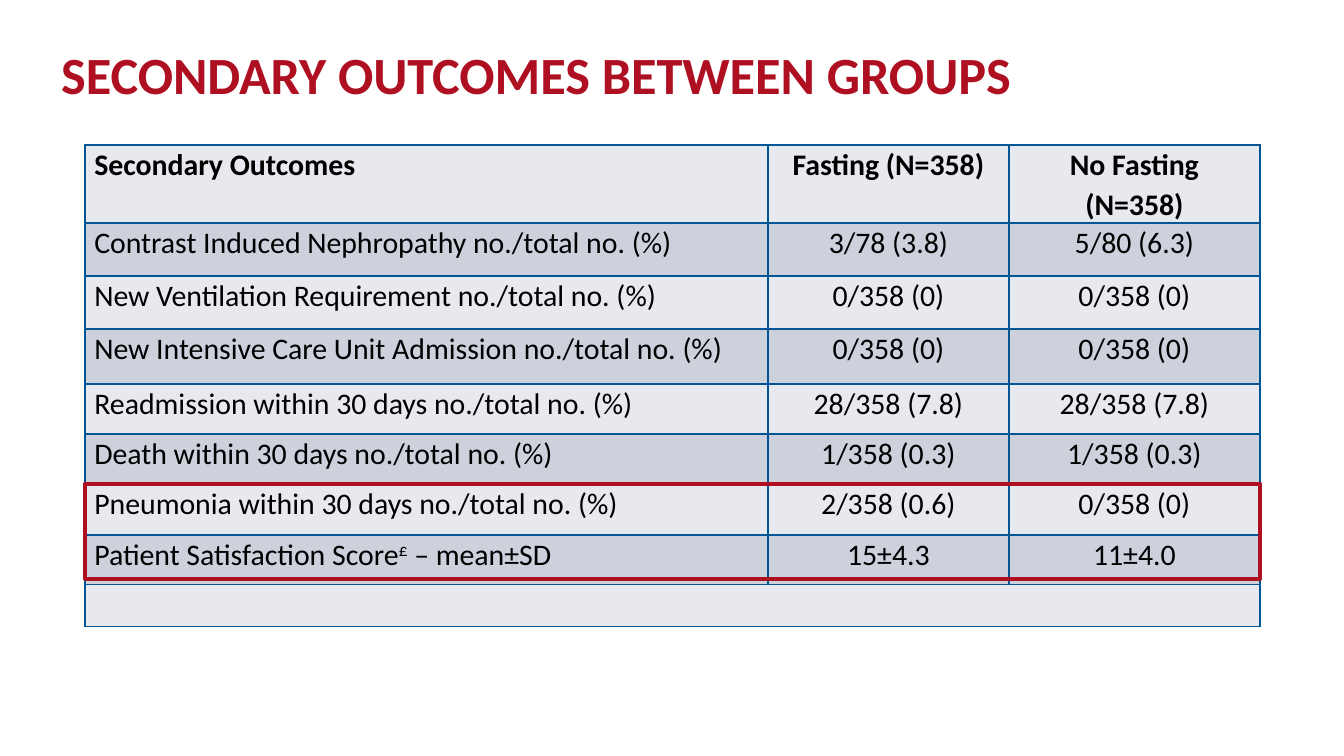
from lxml import etree
from pptx import Presentation
from pptx import util as u
from pptx.dml.color import RGBColor
from pptx.enum import shapes, text
from pptx.oxml.ns import qn

EMU_PER_PX = 914400 / 134.4
FONT = "Calibri"
RED = "AE1022"
BLACK = "000000"
BORDER = "005694"
BANDS = ["E7E9EE", "CCD1DC"]
COLUMN_WIDTHS = [683, 241, 251]
ROW_HEIGHTS = [78, 53, 53, 55, 50, 50, 51, 50, 42]
# A caret pair marks superscript text.
OUTCOMES = [
    ("Secondary Outcomes", "Fasting (N=358)", "No Fasting (N=358)"),
    ("Contrast Induced Nephropathy no./total no. (%)", "3/78 (3.8)", "5/80 (6.3)"),
    ("New Ventilation Requirement no./total no. (%)", "0/358 (0)", "0/358 (0)"),
    ("New Intensive Care Unit Admission no./total no. (%)", "0/358 (0)", "0/358 (0)"),
    ("Readmission within 30 days no./total no. (%)", "28/358 (7.8)", "28/358 (7.8)"),
    ("Death within 30 days no./total no. (%)", "1/358 (0.3)", "1/358 (0.3)"),
    ("Pneumonia within 30 days no./total no. (%)", "2/358 (0.6)", "0/358 (0)"),
    ("Patient Satisfaction Score^£^ – mean±SD", "15±4.3", "11±4.0"),
]


def px(length):
    return u.Emu(round(length * EMU_PER_PX))


def color(hex_code):
    return RGBColor.from_string(hex_code)


def add_run(paragraph, words, size, hex_code, bold=False, superscript=False):
    run = paragraph.add_run()
    run.text = words
    run.font.name = FONT
    run.font.size = u.Pt(size)
    run.font.bold = bold
    run.font.color.rgb = color(hex_code)
    if superscript:
        run._r.get_or_add_rPr().set("baseline", "30000")


def add_title(slide, words):
    title = slide.shapes.add_textbox(px(48), px(50), px(1122), px(63))
    frame = title.text_frame
    frame.word_wrap = True
    frame.vertical_anchor = text.MSO_ANCHOR.MIDDLE
    paragraph = frame.paragraphs[0]
    paragraph.line_spacing = u.Pt(25)
    add_run(paragraph, words, 28, RED, bold=True)


def style_cell(cell, fill):
    """Set margins, a thin border on all sides and the band fill."""
    cell.margin_left = cell.margin_right = u.Inches(0.07)
    cell.margin_top = cell.margin_bottom = 0
    properties = cell._tc.get_or_add_tcPr()
    for side in ("a:lnL", "a:lnR", "a:lnT", "a:lnB"):
        line = etree.SubElement(properties, qn(side), w=str(u.Pt(1)))
        solid = etree.SubElement(line, qn("a:solidFill"))
        etree.SubElement(solid, qn("a:srgbClr"), val=BORDER)
    cell.fill.solid()
    cell.fill.fore_color.rgb = color(fill)


def write_cell(cell, words, align, bold):
    paragraph = cell.text_frame.paragraphs[0]
    paragraph.alignment = align
    paragraph.line_spacing = 1.07
    paragraph.space_after = u.Pt(8)
    for index, part in enumerate(words.split("^")):
        add_run(paragraph, part, 16, BLACK, bold, superscript=index % 2 == 1)


def add_outcomes_table(slide):
    frame = slide.shapes.add_table(
        len(ROW_HEIGHTS), len(COLUMN_WIDTHS), px(85), px(145),
        px(sum(COLUMN_WIDTHS)), px(sum(ROW_HEIGHTS)))
    table = frame.table
    table.first_row = table.horz_banding = False
    for column, width in zip(table.columns, COLUMN_WIDTHS):
        column.width = px(width)
    for index, (row, height) in enumerate(zip(table.rows, ROW_HEIGHTS)):
        row.height = px(height)
        for cell in row.cells:
            style_cell(cell, BANDS[index % 2])
    for row_index, outcome in enumerate(OUTCOMES):
        for column_index, words in enumerate(outcome):
            align = text.PP_ALIGN.CENTER if column_index else text.PP_ALIGN.JUSTIFY
            write_cell(table.cell(row_index, column_index), words, align,
                       bold=row_index == 0)
    last = len(ROW_HEIGHTS) - 1
    table.cell(last, 0).merge(table.cell(last, len(COLUMN_WIDTHS) - 1))


def add_highlight(slide):
    highlight = slide.shapes.add_shape(
        shapes.MSO_SHAPE.RECTANGLE, px(85), px(484), px(sum(COLUMN_WIDTHS)), px(95))
    highlight.shadow.inherit = False
    highlight.fill.background()
    highlight.line.color.rgb = color(RED)
    highlight.line.width = u.Pt(2.5)


def main():
    deck = Presentation()
    deck.slide_width, deck.slide_height = px(1344), px(756)
    slide = deck.slides.add_slide(deck.slide_layouts[6])
    add_title(slide, "SECONDARY OUTCOMES BETWEEN GROUPS")
    add_outcomes_table(slide)
    add_highlight(slide)
    deck.save("out.pptx")


if __name__ == "__main__":
    main()
